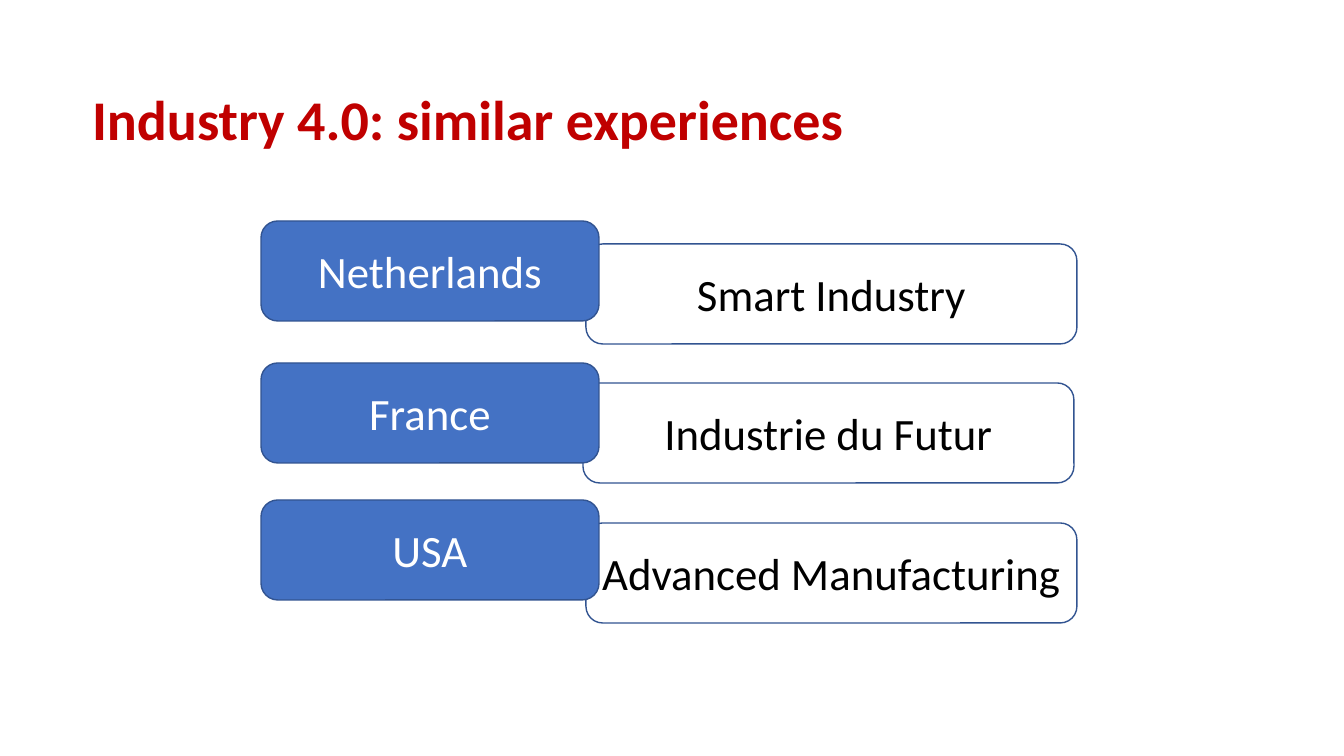
from pptx import Presentation
from pptx.dml.color import RGBColor
from pptx.enum.shapes import MSO_SHAPE
from pptx.enum.text import MSO_ANCHOR, MSO_AUTO_SIZE, PP_ALIGN
from pptx.util import Emu, Pt

EMU_PER_PX = 914400 / 100.8
RED = RGBColor(0xC0, 0x00, 0x00)
BLUE = RGBColor(0x44, 0x72, 0xC4)
OUTLINE = RGBColor(0x32, 0x54, 0x91)
BLACK = RGBColor(0x00, 0x00, 0x00)
WHITE = RGBColor(0xFF, 0xFF, 0xFF)

COUNTRY_LEFT, COUNTRY_WIDTH = 261, 338
PROGRAMME_WIDTH = 491
BOX_HEIGHT = 100

# country, its top, programme, its left and top
EXPERIENCES = [
    ("Netherlands", 221, "Smart Industry", 586, 244),
    ("France", 363, "Industrie du Futur", 583, 383),
    ("USA", 500, "Advanced Manufacturing", 586, 523),
]


def px(length):
    return Emu(round(length * EMU_PER_PX))


def write(frame, text, *, size, color, bold=False, align=PP_ALIGN.LEFT,
          anchor=MSO_ANCHOR.TOP, font="Calibri"):
    frame.word_wrap = True
    frame.auto_size = MSO_AUTO_SIZE.NONE
    frame.vertical_anchor = anchor
    paragraph = frame.paragraphs[0]
    paragraph.alignment = align
    run = paragraph.add_run()
    run.text = text
    run.font.name = font
    run.font.size = Pt(size)
    run.font.bold = bold
    run.font.color.rgb = color


class ExperienceSlide:
    title_size = 40
    box_size = 32

    def __init__(self, presentation):
        self.slide = presentation.slides.add_slide(presentation.slide_layouts[5])

    def title(self, text, left, top, width, height):
        heading = self.slide.shapes.title
        heading.left, heading.top = px(left), px(top)
        heading.width, heading.height = px(width), px(height)
        write(heading.text_frame, text, size=self.title_size, color=RED, bold=True)

    def box(self, text, left, top, width, fill, color):
        box = self.slide.shapes.add_shape(
            MSO_SHAPE.ROUNDED_RECTANGLE, px(left), px(top), px(width), px(BOX_HEIGHT))
        box.shadow.inherit = False
        if fill is None:
            box.fill.background()
        else:
            box.fill.solid()
            box.fill.fore_color.rgb = fill
        box.line.color.rgb = OUTLINE
        box.line.width = Pt(1)
        write(box.text_frame, text, size=self.box_size, color=color,
              align=PP_ALIGN.CENTER, anchor=MSO_ANCHOR.MIDDLE)


def main():
    presentation = Presentation()
    presentation.slide_width, presentation.slide_height = px(1344), px(756)
    page = ExperienceSlide(presentation)
    page.title("Industry 4.0: similar experiences", 82, 79, 788, 78)
    for _, _, programme, left, top in reversed(EXPERIENCES):
        page.box(programme, left, top, PROGRAMME_WIDTH, None, BLACK)
    for country, top, *_ in EXPERIENCES:
        page.box(country, COUNTRY_LEFT, top, COUNTRY_WIDTH, BLUE, WHITE)
    presentation.save("out.pptx")


if __name__ == "__main__":
    main()
